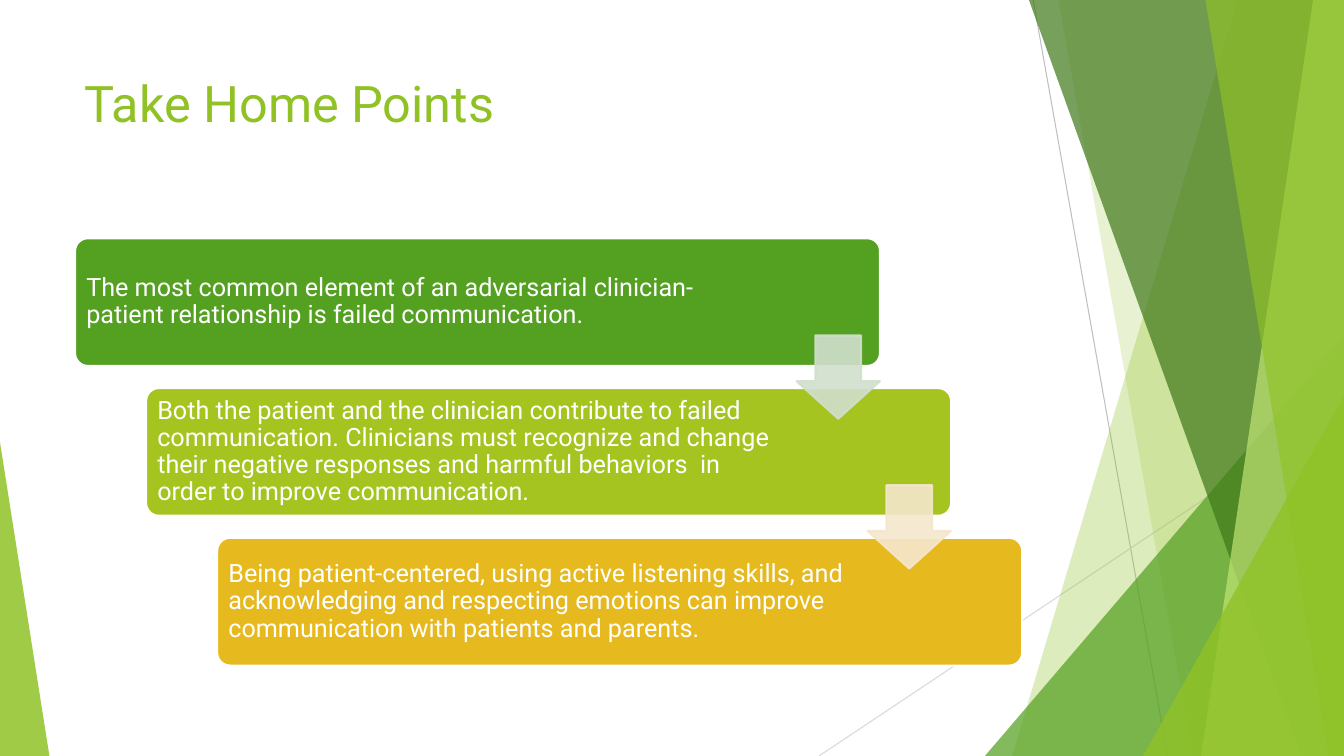
from lxml import etree
from pptx import Presentation
from pptx.dml.color import RGBColor
from pptx.enum import shapes, text
from pptx.oxml import ns
from pptx.util import Pt

THEME = {
    "font": "Roboto",
    "title_size": 36,
    "body_size": 18,
    "white": "FFFFFF",
    "lime": "90C226",
    "green": "54A021",
    "forest": "3F7819",
    "pale_lime": "C0E474",
    "olive": "A5C41F",
    "gold": "E6B91E",
    "pale_green": "D1DFCD",
    "cream": "F5E7CD",
    "dark_rule": "BFBFBF",
    "light_rule": "D9D9D9",
}


def write_text(slide, content, left, top, width, height, size, color,
               anchor=text.MSO_ANCHOR.TOP, inset=(7.2, 3.6), spacing=1.0):
    tf = slide.shapes.add_textbox(Pt(left), Pt(top), Pt(width), Pt(height)).text_frame
    tf.word_wrap = True
    tf.vertical_anchor = anchor
    tf.margin_left = tf.margin_right = Pt(inset[0])
    tf.margin_top = tf.margin_bottom = Pt(inset[1])
    p = tf.paragraphs[0]
    p.line_spacing = spacing
    r = p.add_run()
    r.text = content
    r.font.name = THEME["font"]
    r.font.size = Pt(size)
    r.font.color.rgb = RGBColor.from_string(THEME[color])


def paint(s, color, alpha=100, line=None):
    s.shadow.inherit = False
    s.fill.solid()
    s.fill.fore_color.rgb = RGBColor.from_string(THEME[color])
    if line:
        s.line.color.rgb = RGBColor.from_string(THEME[line])
        s.line.width = Pt(1.5)
    else:
        s.line.fill.background()
    if alpha < 100:
        for clr in s._element.spPr.iter(ns.qn("a:srgbClr")):
            etree.SubElement(clr, ns.qn("a:alpha")).set("val", str(alpha * 1000))


prs = Presentation()
prs.slide_width, prs.slide_height = Pt(960), Pt(540)
slide = prs.slides.add_slide(prs.slide_layouts[6])

for x1, y1, x2, y2, color in [
    (738, 0, 834, 540, "dark_rule"),
    (960, 290, 585, 540, "light_rule"),
]:
    rule = slide.shapes.add_connector(
        shapes.MSO_CONNECTOR.STRAIGHT, Pt(x1), Pt(y1), Pt(x2), Pt(y2))
    rule.line.color.rgb = RGBColor.from_string(THEME[color])
    rule.line.width = Pt(0.75)
    etree.SubElement(rule._element.spPr, ns.qn("a:effectLst"))

facets = [
    ("band", 884, 723, "lime", 30),
    ("band", 756, 852, "lime", 20),
    ("triangle", 703.5, 240, 256.5, 1, "green", 72),
    ("band", 735, 929.5, "forest", 70),
    ("band", 938, 858, "pale_lime", 70),
    ("band", 861, 949, "lime", 65),
    ("triangle", 816.5, 283, 143.5, 1, "lime", 80),
    ("triangle", 0, 316, 35.3, 0, "lime", 85),
]
for kind, *geometry, color, alpha in facets:
    if kind == "band":
        top_x, bottom_x = geometry
        outline = slide.shapes.build_freeform(Pt(top_x), 0)
        outline.add_line_segments(
            [(Pt(960), 0), (Pt(960), Pt(540)), (Pt(bottom_x), Pt(540))], close=True)
        s = outline.convert_to_shape()
    else:
        left, top, width, apex = geometry
        s = slide.shapes.add_shape(
            shapes.MSO_SHAPE.ISOSCELES_TRIANGLE,
            Pt(left), Pt(top), Pt(width), Pt(540 - top))
        s.adjustments[0] = apex
    paint(s, color, alpha)

write_text(slide, "Take Home Points", 53.3, 48, 677, 104,
           size=THEME["title_size"], color="lime")

card_left, card_top, card_width, card_height = 53.6, 170.2, 575, 91.2
step_x, step_y = 50.75, 107
points = [
    ("The most common element of an adversarial clinician-patient relationship "
     "is failed communication.", "green", 476.6),
    ("Both the patient and the clinician contribute to failed communication. "
     "Clinicians must recognize and change their negative responses and harmful "
     "behaviors  in order to improve communication.", "olive", 459.4),
    ("Being patient-centered, using active listening skills, and acknowledging "
     "and respecting emotions can improve communication with patients and parents.",
     "gold", 459.4),
]
for i, (content, color, text_width) in enumerate(points):
    left, top = card_left + i * step_x, card_top + i * step_y
    card = slide.shapes.add_shape(
        shapes.MSO_SHAPE.ROUNDED_RECTANGLE,
        Pt(left), Pt(top), Pt(card_width), Pt(card_height))
    card.adjustments[0] = 0.1
    paint(card, color, line="white")
    write_text(slide, content, left + 2.6, top + 2.6, text_width, card_height - 5.2,
               size=THEME["body_size"], color="white",
               anchor=text.MSO_ANCHOR.MIDDLE, inset=(5.4, 5.4), spacing=0.9)

for i, color in enumerate(["pale_green", "cream"]):
    arrow = slide.shapes.add_shape(
        shapes.MSO_SHAPE.DOWN_ARROW,
        Pt(569 + i * step_x), Pt(239.6 + i * step_y), Pt(59.5), Pt(59.5))
    arrow.adjustments[0] = 0.55
    arrow.adjustments[1] = 0.45
    paint(arrow, color, 90, line=color)

prs.save("out.pptx")
